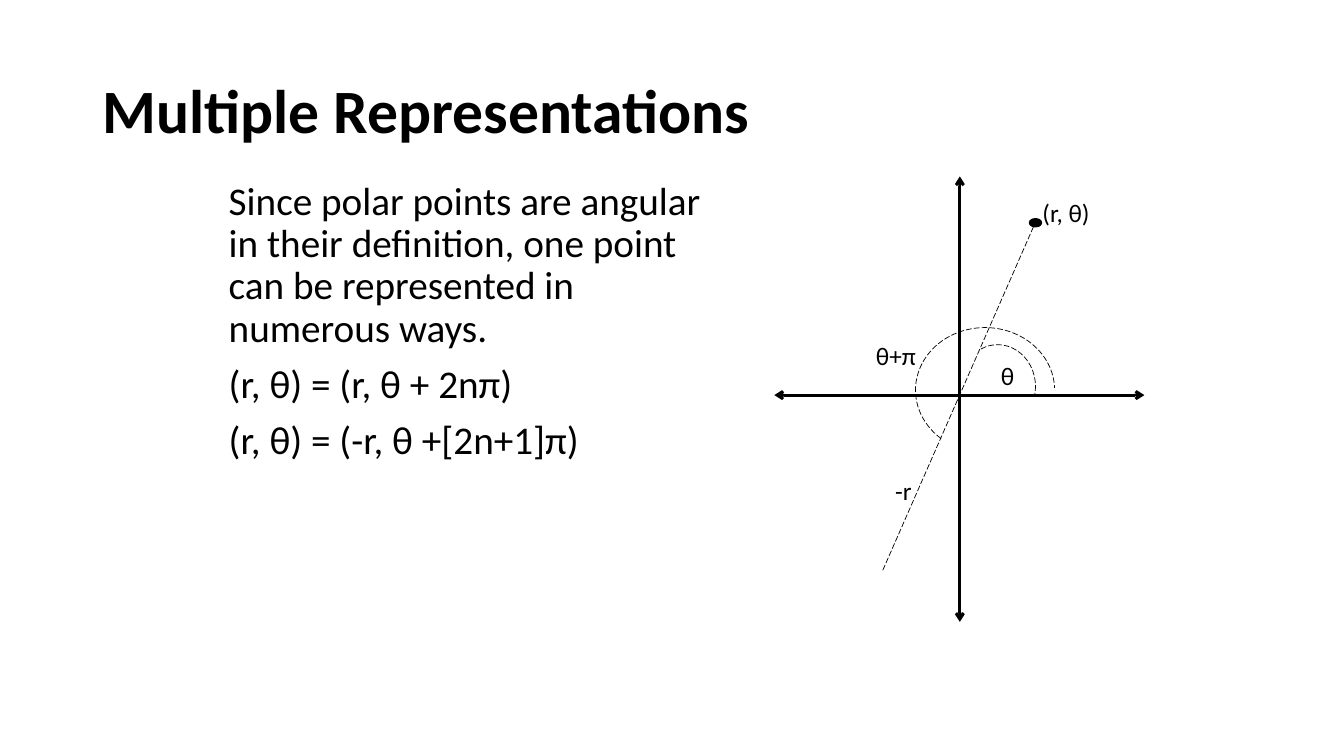
"""Build the slide on multiple representations of polar points."""
import pptx
import pptx.dml.color
import pptx.enum.dml
import pptx.enum.shapes
import pptx.enum.text
import pptx.oxml
import pptx.oxml.ns
import pptx.util
from dataclasses import dataclass

Inches = pptx.util.Inches
Pt = pptx.util.Pt
SHAPES = pptx.enum.shapes.MSO_SHAPE

TITLE = ("Multiple Representations", (0.92, 0.4, 11.5, 1.45))
BODY = (
    [
        "Since polar points are angular in their definition, "
        "one point can be represented in numerous ways.",
        "(r, θ) = (r, θ + 2nπ)",
        "(r, θ) = (-r, θ +[2n+1]π)",
    ],
    (2.17, 1.75, 4.92, 4.95),
)
AXES = [((9.52, 1.75), (9.52, 6.17)), ((7.68, 3.92), (11.35, 3.92))]
RAY = ((10.25, 2.25), (8.75, 5.67))
ANGLE_ARCS = [
    ((9.52, 3.42, 0.75, 0.83), (246.11, 12.42)),
    ((9.08, 3.25, 1.38, 1.24), (132.25, 358.13)),
]
POINT = (10.21, 2.17, 0.12, 0.08)
LABELS = [
    ("(r, θ)", (10.24, 1.91, 0.68, 0.4), False),
    ("θ", (9.83, 3.53, 0.34, 0.4), False),
    ("θ+π", (8.59, 3.33, 0.97, 0.4), True),
    ("-r", (8.78, 4.67, 0.97, 0.4), True),
]


@dataclass(frozen=True)
class Theme:
    font: str = "Calibri"
    ink: str = "000000"
    title: int = 44
    body: int = 28
    label: int = 18
    axis: float = 2
    outline: float = 1
    guide: float = 0.5


THEME = Theme()
INK = pptx.dml.color.RGBColor.from_string(THEME.ink)


def inches(values):
    return [Inches(value) for value in values]


def format_text(frame, size, bold=False, spacing=None, before=None):
    for paragraph in frame.paragraphs:
        paragraph.alignment = pptx.enum.text.PP_ALIGN.LEFT
        paragraph.line_spacing = spacing
        if before is not None:
            paragraph.space_before = Pt(before)
        for run in paragraph.runs:
            run.font.name = THEME.font
            run.font.size = Pt(size)
            run.font.bold = bold
            run.font.color.rgb = INK


def style_line(line, width, dashed=False):
    line.color.rgb = INK
    line.width = Pt(width)
    if dashed:
        line.dash_style = pptx.enum.dml.MSO_LINE.LONG_DASH


def add_title(slide):
    words, box = TITLE
    title = slide.shapes.title
    title.left, title.top, title.width, title.height = inches(box)
    frame = title.text_frame
    frame.text = words
    frame.vertical_anchor = pptx.enum.text.MSO_ANCHOR.MIDDLE
    format_text(frame, THEME.title, bold=True, spacing=0.9)


def add_text(slide, words, box, size, wrap=True, **spacing):
    frame = slide.shapes.add_textbox(*inches(box)).text_frame
    frame.text = words
    frame.word_wrap = wrap
    format_text(frame, size, **spacing)
    return frame


def add_line(slide, ends, width, dashed=False, arrows=False):
    start, end = ends
    line = slide.shapes.add_connector(
        pptx.enum.shapes.MSO_CONNECTOR.STRAIGHT, *inches(start + end))
    style_line(line.line, width, dashed)
    properties = line._element.spPr
    if arrows:
        outline = line.line._get_or_add_ln()
        for tag in ("a:headEnd", "a:tailEnd"):
            arrowhead = pptx.oxml.parse_xml(
                f'<{tag} {pptx.oxml.ns.nsdecls("a")} type="arrow"/>')
            outline.append(arrowhead)
    properties.append(pptx.oxml.parse_xml(
        f'<a:effectLst {pptx.oxml.ns.nsdecls("a")}/>'))


def add_arc(slide, box, angles):
    arc = slide.shapes.add_shape(SHAPES.ARC, *inches(box))
    arc.shadow.inherit = False
    arc.fill.background()
    style_line(arc.line, THEME.guide, dashed=True)
    for index, degrees in enumerate(angles):
        arc.adjustments[index] = degrees * 60000 / 100000


def add_point(slide):
    point = slide.shapes.add_shape(SHAPES.OVAL, *inches(POINT))
    point.shadow.inherit = False
    point.fill.solid()
    point.fill.fore_color.rgb = INK
    style_line(point.line, THEME.outline)


def main():
    deck = pptx.Presentation()
    deck.slide_width, deck.slide_height = inches((13.33, 7.5))
    slide = deck.slides.add_slide(deck.slide_layouts.get_by_name("Title Only"))
    add_title(slide)
    paragraphs, box = BODY
    add_text(slide, "\n".join(paragraphs), box, THEME.body, spacing=0.9, before=10)
    for axis in AXES:
        add_line(slide, axis, THEME.axis, arrows=True)
    add_line(slide, RAY, THEME.guide, dashed=True)
    for box, angles in ANGLE_ARCS:
        add_arc(slide, box, angles)
    add_point(slide)
    for words, box, wrap in LABELS:
        label = add_text(slide, words, box, THEME.label, wrap)
        label.auto_size = pptx.enum.text.MSO_AUTO_SIZE.SHAPE_TO_FIT_TEXT
    deck.save("out.pptx")


if __name__ == "__main__":
    main()
